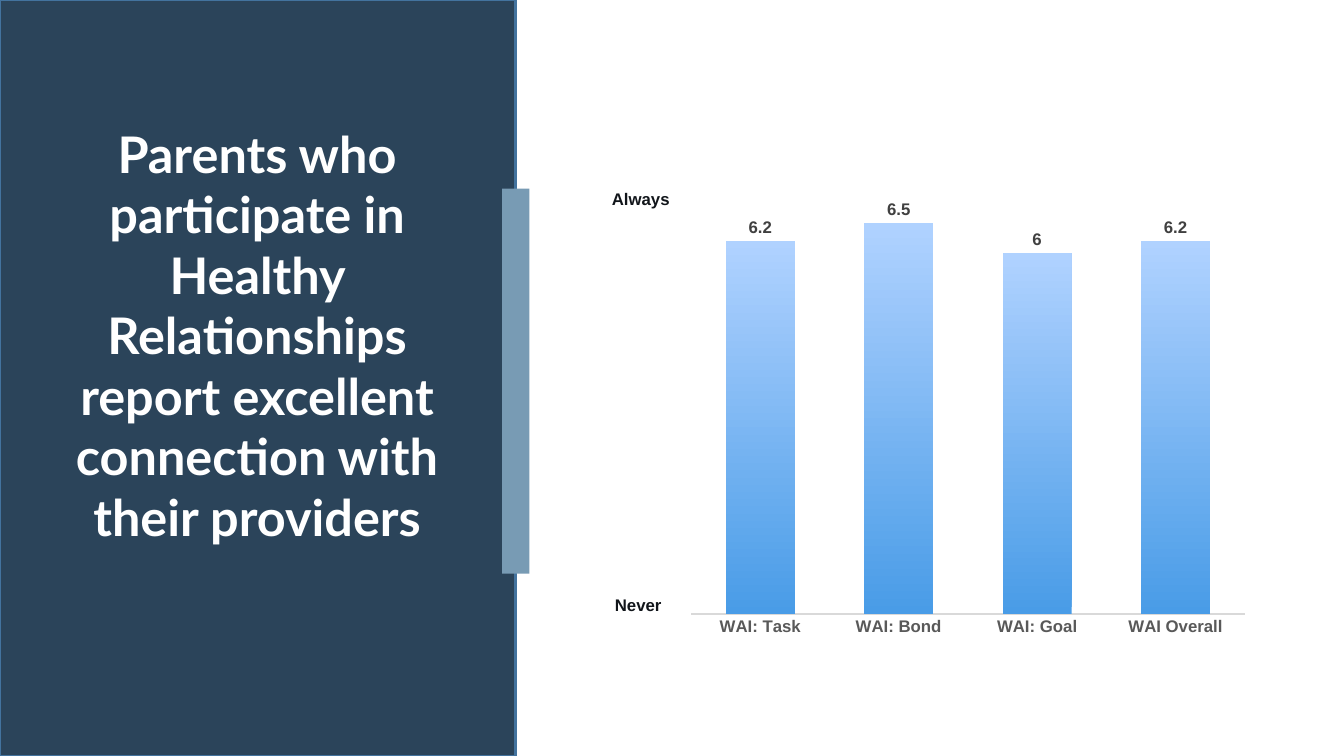
"""Build the slide on parents' connection with their providers."""
from dataclasses import dataclass

from pptx import Presentation
from pptx.chart.data import CategoryChartData
from pptx.dml.color import RGBColor
from pptx.enum.chart import XL_CHART_TYPE, XL_LABEL_POSITION, XL_TICK_MARK
from pptx.enum.shapes import MSO_SHAPE
from pptx.enum.text import MSO_AUTO_SIZE, PP_ALIGN
from pptx.util import Inches, Pt

COLUMNS = XL_CHART_TYPE.COLUMN_CLUSTERED
OUTSIDE_END = XL_LABEL_POSITION.OUTSIDE_END
NO_TICKS = XL_TICK_MARK.NONE
RECTANGLE = MSO_SHAPE.RECTANGLE
FIT_SHAPE = MSO_AUTO_SIZE.SHAPE_TO_FIT_TEXT
LEFT, CENTER = PP_ALIGN.LEFT, PP_ALIGN.CENTER


@dataclass(frozen=True)
class Theme:
    """Colours, fonts and type sizes of the slide."""
    panel: str = "2B445A"
    panel_edge: str = "43739E"
    accent: str = "789BB4"
    title: str = "FFFFFF"
    scale: str = "11151A"
    category: str = "595959"
    value: str = "404040"
    axis: str = "D9D9D9"
    bar_bottom: str = "499CE7"
    bar_top: str = "B0D2FF"
    title_font: str = "Lato"
    body_font: str = "Arial"
    title_size: int = 36
    body_size: int = 12


THEME = Theme()
TITLE = ("Parents who participate in Healthy Relationships report "
         "excellent connection with their providers")
RATINGS = {"WAI: Task": 6.2, "WAI: Bond": 6.5, "WAI: Goal": 6, "WAI Overall": 6.2}
SCALE_ENDS = [("Always", (5.97, 1.82, 1.24, 0.3)), ("Never", (6, 5.85, 1.14, 0.3))]


def rgb(code):
    """Turn a hex code into a colour."""
    return RGBColor.from_string(code)


def box(bounds):
    """Turn left, top, width and height in inches into lengths."""
    return [Inches(length) for length in bounds]


def apply(target, formats):
    """Set each attribute in formats on target."""
    for attribute, setting in formats.items():
        setattr(target, attribute, setting)


def style_font(font, name, size, color):
    """Give a font its bold style."""
    apply(font, {"name": name, "size": Pt(size), "bold": True})
    font.color.rgb = rgb(color)


def add_panel(slide, bounds, fill, edge=None):
    """Add a filled rectangle, with an edge if one is given."""
    panel = slide.shapes.add_shape(RECTANGLE, *box(bounds))
    panel.shadow.inherit = False
    panel.fill.solid()
    panel.fill.fore_color.rgb = rgb(fill)
    if edge:
        panel.line.color.rgb = rgb(edge)
        panel.line.width = Pt(2)
    else:
        panel.line.fill.background()


def add_text(slide, bounds, wording, font_format, align=LEFT):
    """Add a wrapped text box holding one paragraph."""
    frame = slide.shapes.add_textbox(*box(bounds)).text_frame
    apply(frame, {"word_wrap": True, "auto_size": FIT_SHAPE})
    paragraph = frame.paragraphs[0]
    paragraph.alignment = align
    run = paragraph.add_run()
    run.text = wording
    style_font(run.font, *font_format)


def style_axes(chart):
    """Show the category axis and hide the value axis."""
    apply(chart.value_axis, {"minimum_scale": 0, "maximum_scale": 7,
                             "has_major_gridlines": False, "visible": False})
    categories = chart.category_axis
    apply(categories, {"major_tick_mark": NO_TICKS, "minor_tick_mark": NO_TICKS,
                       "has_major_gridlines": False})
    categories.format.line.color.rgb = rgb(THEME.axis)
    categories.format.line.width = Pt(1)
    style_font(categories.tick_labels.font, THEME.body_font, THEME.body_size,
               THEME.category)


def style_bars(plot):
    """Give the bars their gradient, spacing and value labels."""
    apply(plot, {"gap_width": 100, "overlap": -24, "vary_by_categories": False,
                 "has_data_labels": True})
    apply(plot.data_labels, {"show_value": True, "position": OUTSIDE_END})
    style_font(plot.data_labels.font, THEME.body_font, THEME.body_size, THEME.value)
    fill = plot.series[0].format.fill
    fill.gradient()
    fill.gradient_angle = 90
    for stop, color in zip(fill.gradient_stops, (THEME.bar_bottom, THEME.bar_top)):
        stop.color.rgb = rgb(color)


def add_ratings_chart(slide, bounds):
    """Add the column chart of ratings."""
    ratings = CategoryChartData()
    ratings.categories = list(RATINGS)
    ratings.add_series("Series 1", list(RATINGS.values()))
    chart = slide.shapes.add_chart(COLUMNS, *box(bounds), ratings).chart
    apply(chart, {"has_legend": False, "has_title": False})
    apply(chart.font, {"name": THEME.body_font, "size": Pt(THEME.body_size)})
    style_axes(chart)
    style_bars(chart.plots[0])


def main():
    """Build and save the slide."""
    deck = Presentation()
    apply(deck, {"slide_width": Inches(13.33), "slide_height": Inches(7.5)})
    slide = deck.slides.add_slide(deck.slide_layouts[6])
    add_panel(slide, (0, 0, 5.11, 7.5), THEME.panel, THEME.panel_edge)
    add_text(slide, (0.52, 1.17, 4.06, 4.34), TITLE,
             (THEME.title_font, THEME.title_size, THEME.title), CENTER)
    add_panel(slide, (4.98, 1.87, 0.27, 3.82), THEME.accent)
    for wording, bounds in SCALE_ENDS:
        add_text(slide, bounds, wording,
                 (THEME.body_font, THEME.body_size, THEME.scale))
    add_ratings_chart(slide, (6.74, 1.82, 5.72, 4.58))
    deck.save("out.pptx")


if __name__ == "__main__":
    main()
